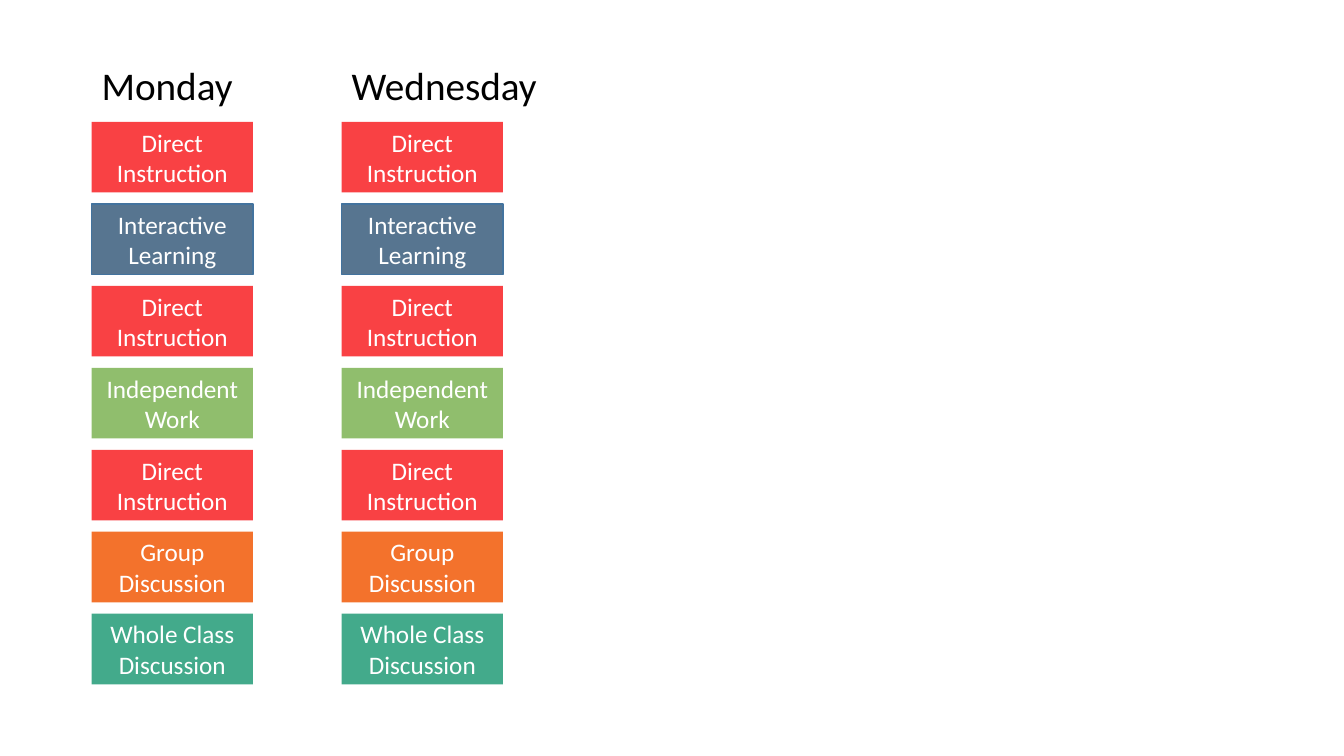
from pptx import Presentation
from pptx.dml.color import RGBColor
from pptx.enum.shapes import MSO_SHAPE
from pptx.enum.text import MSO_ANCHOR, MSO_AUTO_SIZE, PP_ALIGN
from pptx.util import Pt

RECTANGLE = MSO_SHAPE.RECTANGLE
MIDDLE = MSO_ANCHOR.MIDDLE
CENTER = PP_ALIGN.CENTER
LEFT = PP_ALIGN.LEFT
GROW = MSO_AUTO_SIZE.SHAPE_TO_FIT_TEXT

DAYS = [("Wednesday", 244.1), ("Monday", 65.5)]  # name, left edge
ACTIVITIES = [
    "Direct Instruction",
    "Interactive Learning",
    "Direct Instruction",
    "Independent Work",
    "Direct Instruction",
    "Group Discussion",
    "Whole Class Discussion",
]
COLORS = {
    "Direct Instruction": "F94144",
    "Interactive Learning": "577590",
    "Independent Work": "90BE6D",
    "Group Discussion": "F3722C",
    "Whole Class Discussion": "43AA8B",
    "text": "FFFFFF",
    "heading": "000000",
    "outline": "43739E",
}
OUTLINED = "Interactive Learning"

FONT = "Calibri"
HEADING_TOP, HEADING_WIDTH, HEADING_HEIGHT = 40.3, 156.2, 41.2
BOX_TOP, BOX_WIDTH, BOX_HEIGHT = 87.1, 115.2, 50.4
BOX_PITCH = 58.55


def color(name):
    return RGBColor.from_string(COLORS[name])


def write(frame, text, size, color_name, alignment):
    para = frame.paragraphs[0]
    para.text = text
    para.alignment = alignment
    para.font.name = FONT
    para.font.size = Pt(size)
    para.font.color.rgb = color(color_name)


def add_activity(column, activity, left, top):
    box = column.shapes.add_shape(
        RECTANGLE, Pt(left), Pt(top), Pt(BOX_WIDTH), Pt(BOX_HEIGHT))
    box.shadow.inherit = False
    box.fill.solid()
    box.fill.fore_color.rgb = color(activity)
    if activity == OUTLINED:
        box.line.color.rgb = color("outline")
        box.line.width = Pt(1)
    else:
        box.line.fill.background()
    frame = box.text_frame
    frame.word_wrap = True
    frame.vertical_anchor = MIDDLE
    write(frame, activity, 18, "text", CENTER)


def add_heading(column, day, left):
    heading = column.shapes.add_textbox(
        Pt(left), Pt(HEADING_TOP), Pt(HEADING_WIDTH), Pt(HEADING_HEIGHT))
    frame = heading.text_frame
    frame.word_wrap = True
    frame.auto_size = GROW
    write(frame, day, 28, "heading", LEFT)


def main():
    deck = Presentation()
    deck.slide_width, deck.slide_height = Pt(960), Pt(540)
    blank_layout = deck.slide_layouts[6]
    slide = deck.slides.add_slide(blank_layout)
    for day, left in DAYS:
        column = slide.shapes.add_group_shape()
        for row, activity in enumerate(ACTIVITIES):
            add_activity(column, activity, left, BOX_TOP + row * BOX_PITCH)
        add_heading(column, day, left)
    deck.save("out.pptx")


if __name__ == "__main__":
    main()
